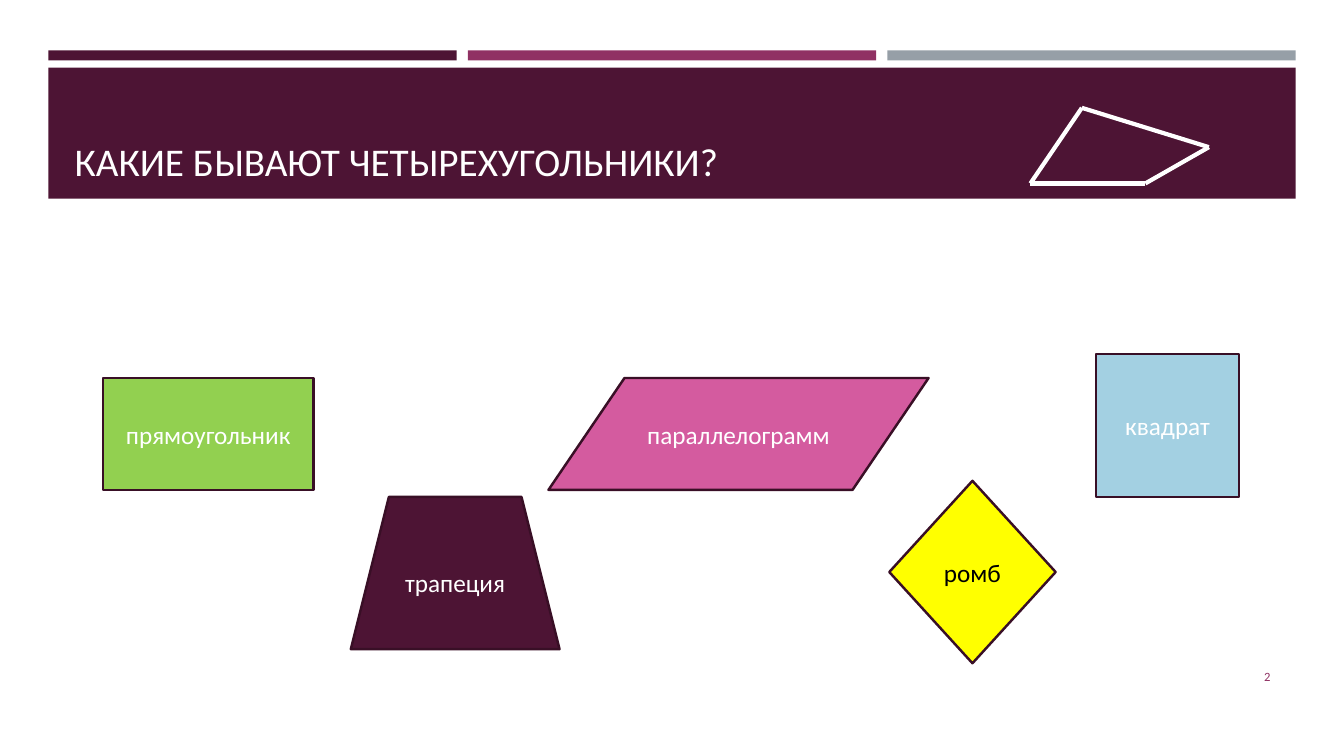
from lxml.etree import SubElement
from pptx import Presentation
from pptx.dml.color import RGBColor
from pptx.enum.shapes import MSO_CONNECTOR, MSO_SHAPE
from pptx.enum.text import MSO_ANCHOR, PP_ALIGN
from pptx.oxml.ns import qn
from pptx.util import Inches, Pt

FONT = "Calibri"
COLORS = {
    "plum": "4D1434", "magenta": "903163", "gray": "969FA7",
    "outline": "390F26", "green": "92D050", "pink": "D45B9F",
    "yellow": "FFFF00", "blue": "A3D0E2", "white": "FFFFFF", "black": "000000",
}


def color(name):
    return RGBColor.from_string(COLORS[name])


def write(shape, text, size, font_color, align, anchor):
    frame = shape.text_frame
    frame.word_wrap = True
    frame.vertical_anchor = anchor
    paragraph = frame.paragraphs[0]
    paragraph.alignment = align
    run = paragraph.add_run()
    run.text = text
    run.font.name = FONT
    run.font.size = Pt(size)
    run.font.color.rgb = color(font_color)


def add_filled_shape(slide, kind, box, fill, outline=None):
    shape = slide.shapes.add_shape(kind, *map(Inches, box))
    shape.shadow.inherit = False
    shape.fill.solid()
    shape.fill.fore_color.rgb = color(fill)
    if outline:
        shape.line.color.rgb = color(outline)
        shape.line.width = Pt(1.75)
    else:
        shape.line.fill.background()
    return shape


def add_header(slide, box, title_text):
    left, top, width, height = box
    # Three stripes above the band
    gap = 0.11
    stripe_width = (width - 2 * gap) / 3
    for index, fill in enumerate(("plum", "magenta", "gray")):
        stripe_left = left + index * (stripe_width + gap)
        add_filled_shape(slide, MSO_SHAPE.RECTANGLE,
                         (stripe_left, top, stripe_width, 0.1), fill)
    # Band
    add_filled_shape(slide, MSO_SHAPE.RECTANGLE,
                     (left, top + 0.17, width, height - 0.17), "plum")
    # Title, brought in front of the band
    title = slide.shapes.title
    title.left, title.top = Inches(left + 0.16), Inches(top + 0.27)
    title.width, title.height = Inches(width - 0.31), Inches(1.11)
    write(title, title_text, 28, "white", PP_ALIGN.LEFT, MSO_ANCHOR.BOTTOM)
    title.element.getparent().append(title.element)


def add_quadrilateral_outline(slide, box):
    left, top, width, height = box
    corners = [(left, top + height), (left + 0.51, top),
               (left + width, top + 0.39), (left + 1.14, top + height)]
    for start, end in zip(corners, corners[1:] + corners[:1]):
        side = slide.shapes.add_connector(
            MSO_CONNECTOR.STRAIGHT, *map(Inches, start + end))
        side.line.color.rgb = color("white")
        side.line.width = Pt(3)
        SubElement(side.element.spPr, qn("a:effectLst"))


def add_figures(slide, box):
    left, top = box[:2]
    # Kind, place within the box, fill, name, text colour
    figures = [
        (MSO_SHAPE.RECTANGLE, (0, 0.24, 2.09, 1.11),
         "green", "прямоугольник", "white"),
        (MSO_SHAPE.TRAPEZOID, (2.46, 1.42, 2.07, 1.51),
         "plum", "трапеция", "white"),
        (MSO_SHAPE.FLOWCHART_DATA, (4.42, 0.24, 3.77, 1.11),
         "pink", "параллелограмм", "white"),
        (MSO_SHAPE.DIAMOND, (7.8, 1.26, 1.65, 1.81),
         "yellow", "ромб", "black"),
        (MSO_SHAPE.RECTANGLE, (9.85, 0, 1.42, 1.42),
         "blue", "квадрат", "white"),
    ]
    for kind, (x, y, width, height), fill, name, font_color in figures:
        figure = add_filled_shape(
            slide, kind, (left + x, top + y, width, height), fill, "outline")
        write(figure, name, 18, font_color, PP_ALIGN.CENTER, MSO_ANCHOR.MIDDLE)


def add_slide_number(slide, box, number):
    number_box = slide.shapes.add_textbox(*map(Inches, box))
    write(number_box, number, 9, "magenta", PP_ALIGN.RIGHT, MSO_ANCHOR.MIDDLE)


def main():
    presentation = Presentation()
    presentation.slide_width = Inches(13.33)
    presentation.slide_height = Inches(7.5)
    slide = presentation.slides.add_slide(presentation.slide_layouts[5])
    add_header(slide, (0.48, 0.5, 12.37, 1.47), "КАКИЕ БЫВАЮТ ЧЕТЫРЕХУГОЛЬНИКИ?")
    add_quadrilateral_outline(slide, (10.22, 1.07, 1.77, 0.75))
    add_figures(slide, (1.02, 3.51, 11.27, 3.07))
    add_slide_number(slide, (11.55, 6.51, 1.15, 0.4), "2")
    presentation.save("out.pptx")


if __name__ == "__main__":
    main()
